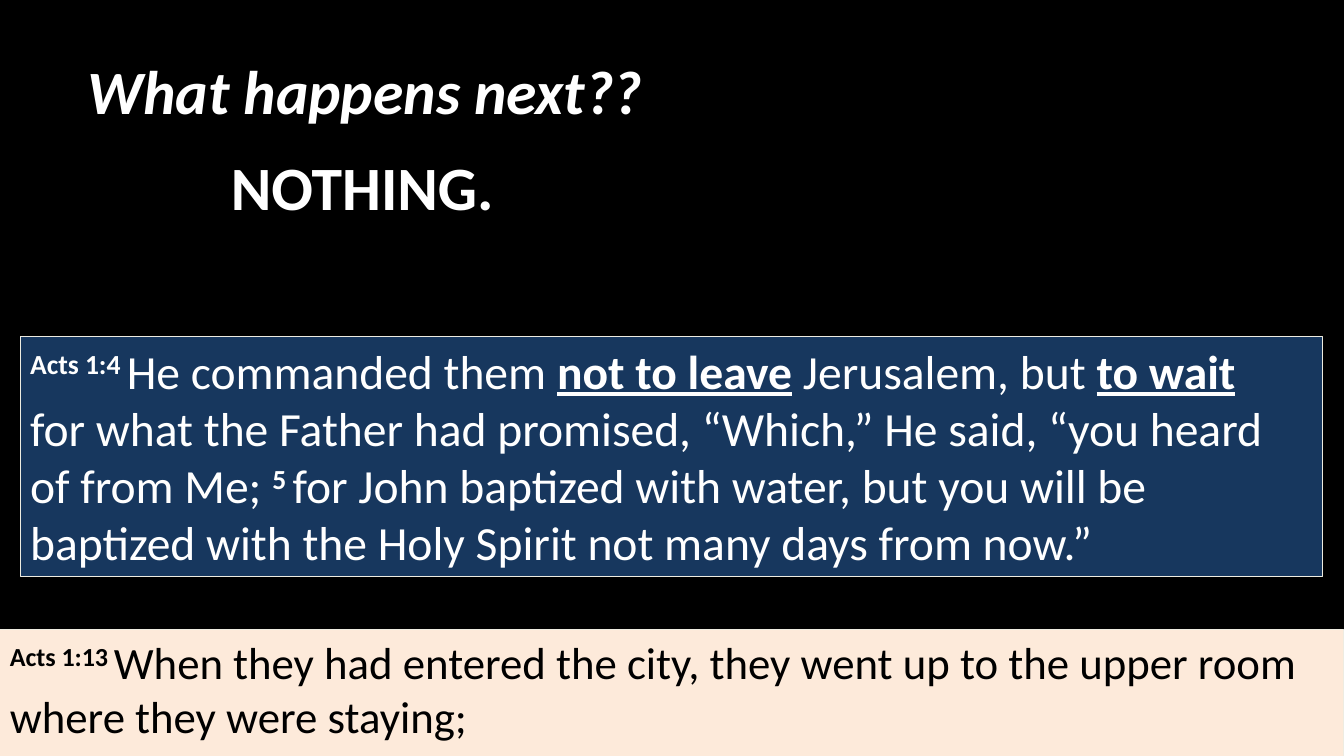
from copy import deepcopy

from pptx import Presentation
from pptx.dml.color import RGBColor
from pptx.enum import shapes, text
from pptx.util import Inches, Pt

BLACK = RGBColor(0x00, 0x00, 0x00)
WHITE = RGBColor(0xFF, 0xFF, 0xFF)
NAVY = RGBColor(0x17, 0x37, 0x5E)
PEACH = RGBColor(0xFD, 0xEA, 0xDA)
CREAM = RGBColor(0xEE, 0xEC, 0xE1)

# Each run is (wording, styles): b bold, i italic, u underline, s superscript.
# A tilde stands for a space that does not break the line.
QUESTION = [("What happens next??", "bi")]
ANSWER = [("NOTHING.", "b")]
UPPER_ROOM = [
    ("Acts 1:13~", "bs"),
    ("When they had entered~the city, they went up to~the upper room "
     "where they were staying;~", ""),
]
COMMAND = [
    ("Acts 1:4~", "bs"),
    ("He commanded them~", ""),
    ("not to leave", "bu"),
    (" ", "b"),
    ("Jerusalem, but ", ""),
    ("to wait ", "bu"),
    ("for~what the Father had promised, “Which,” He said,~“you heard of from Me; ", ""),
    ("5~", "bs"),
    ("for John baptized with water, but you will be baptized with the Holy Spirit~"
     "not many days from now.”", ""),
]

# Verse panels: left, top, width, height, fill, font colour, size, runs
PANELS = [
    (0, 6.25, 13.33, 1.26, PEACH, BLACK, 32, UPPER_ROOM),
    (0.2, 3.34, 12.92, 2.38, NAVY, WHITE, 34, COMMAND),
]
CALLOUT_TIP = (-0.219, 0.496, 0.167)


def write(shape, runs, size, color, align, anchor):
    frame = shape.text_frame
    frame.word_wrap = True
    frame.auto_size = text.MSO_AUTO_SIZE.NONE
    frame.vertical_anchor = anchor
    para = frame.paragraphs[0]
    para.alignment = align
    for wording, styles in runs:
        span = para.add_run()
        span.text = wording.replace("~", chr(160))
        font = span.font
        font.name = "Calibri"
        font.size = Pt(size)
        font.color.rgb = color
        font.bold = "b" in styles
        font.italic = "i" in styles
        font.underline = "u" in styles
        if "s" in styles:
            span._r.get_or_add_rPr().set("baseline", "30000")


deck = Presentation()
deck.slide_width, deck.slide_height = Inches(13.33), Inches(7.5)
page = deck.slides.add_slide(deck.slide_layouts[5])
page.background.fill.solid()
page.background.fill.fore_color.rgb = BLACK

title = page.shapes.title
title.left, title.top = Inches(0.25), Inches(0.25)
title.width, title.height = Inches(6.75), Inches(1.29)
answer = page.shapes.add_shape(
    shapes.MSO_SHAPE.ROUNDED_RECTANGULAR_CALLOUT,
    Inches(0.22), Inches(1.2), Inches(6.75), Inches(1.29))
answer.shadow.inherit = False
answer.fill.background()
answer.line.fill.background()
for index, value in enumerate(CALLOUT_TIP):
    answer.adjustments[index] = value
# The title takes the same callout outline as the answer
title._element.spPr.append(deepcopy(answer._element.spPr.prstGeom))
for heading, runs in ((title, QUESTION), (answer, ANSWER)):
    write(heading, runs, 44, WHITE, text.PP_ALIGN.CENTER, text.MSO_ANCHOR.MIDDLE)

for left, top, width, height, fill, color, size, runs in PANELS:
    panel = page.shapes.add_shape(
        shapes.MSO_SHAPE.RECTANGLE,
        Inches(left), Inches(top), Inches(width), Inches(height))
    panel.shadow.inherit = False
    panel.fill.solid()
    panel.fill.fore_color.rgb = fill
    panel.line.color.rgb = CREAM
    panel.line.width = Pt(0.75)
    write(panel, runs, size, color, text.PP_ALIGN.LEFT, text.MSO_ANCHOR.TOP)

deck.save("out.pptx")
